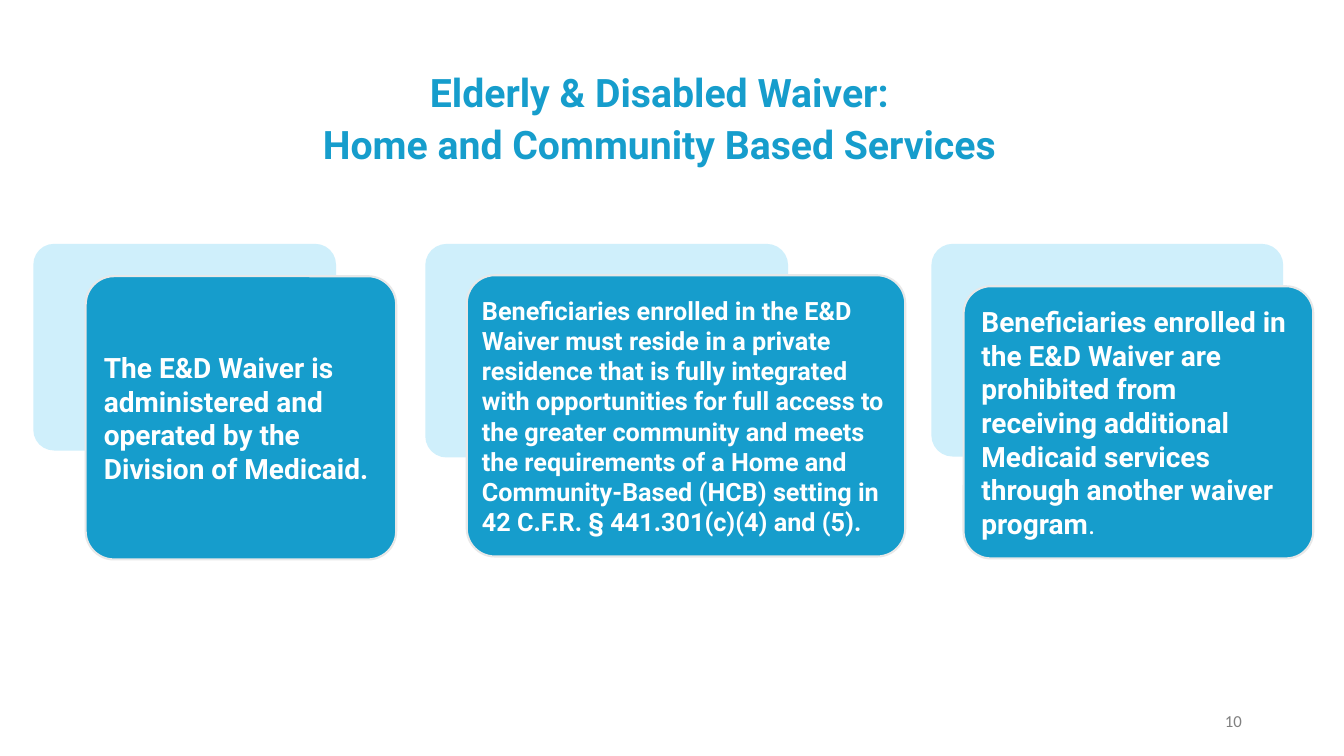
from dataclasses import dataclass

from lxml import etree
from pptx import Presentation
from pptx.dml.color import RGBColor
from pptx.enum import shapes, text
from pptx.oxml import ns
from pptx.util import Pt


@dataclass(frozen=True)
class Theme:
    """Colours, fonts and type sizes of the slide."""
    blue: str = "169DCC"
    pale: str = "CAEEFB"
    edge: str = "E8E8E8"
    white: str = "FFFFFF"
    grey: str = "808080"
    heading_font: str = "Roboto"
    number_font: str = "Calibri"
    title_size: int = 28
    card_size: int = 20
    dense_size: int = 18
    number_size: int = 12
    corner: float = 0.1


THEME = Theme()
SIDES = ("margin_left", "margin_top", "margin_right", "margin_bottom")
CARDS = [
    dict(panel=(23.8, 174.2, 216.2, 147.6), card=(61.2, 197.3, 221.8, 202.3),
         size=THEME.card_size, insets=(7.2, 3.6, 7.2, 3.6),
         words=[("The E&D Waiver is administered and operated by the "
                 "Division of Medicaid.", True)]),
    dict(panel=(303.8, 174.2, 259.2, 152.6), card=(333.4, 196.6, 313.2, 200.9),
         size=THEME.dense_size, insets=(5, 5, 5, 5),
         words=[("Beneficiaries enrolled in the E&D Waiver must reside in a "
                 "private residence that is fully integrated with "
                 "opportunities for full access to the greater community and "
                 "meets the requirements of a Home and Community-Based (HCB) "
                 "setting in 42 C.F.R. § 441.301(c)(4) and (5).", True)]),
    dict(panel=(665.3, 174.2, 251.3, 151.9), card=(688.3, 204.5, 249.8, 194.4),
         size=THEME.card_size, insets=(7.2, 3.6, 7.2, 3.6),
         words=[("Beneficiaries enrolled in the E&D Waiver are prohibited "
                 "from receiving additional Medicaid services through another "
                 "waiver program", True), (".", False)]),
]


def apply(target, formats):
    """Set every attribute named in a dict of format values."""
    for name, value in formats.items():
        setattr(target, name, value)


def write(paragraph, words, font, size, colour, bold=False):
    """Add one run of styled words to a paragraph."""
    run = paragraph.add_run()
    run.text = words
    apply(run.font, dict(name=font, size=Pt(size), bold=bold))
    run.font.color.rgb = RGBColor.from_string(colour)


def add_rounded(slide, box, fill):
    """Add a plain rounded rectangle without outline or shadow."""
    block = slide.shapes.add_shape(
        shapes.MSO_SHAPE.ROUNDED_RECTANGLE, *map(Pt, box))
    block.adjustments[0] = THEME.corner
    block.shadow.inherit = False
    block.fill.solid()
    block.fill.fore_color.rgb = RGBColor.from_string(fill)
    block.line.fill.background()
    return block


def add_panel(slide, box):
    """Add the translucent panel that stands behind a card."""
    panel = add_rounded(slide, box, THEME.pale)
    colour = panel.fill._xPr.find(".//" + ns.qn("a:srgbClr"))
    etree.SubElement(colour, ns.qn("a:alpha"), val="90000")


def add_card(slide, box, size, insets, words):
    """Add a card with its statement, left aligned and centred in height."""
    card = add_rounded(slide, box, THEME.blue)
    card.line.color.rgb = RGBColor.from_string(THEME.edge)
    card.line.width = Pt(1.5)
    frame = card.text_frame
    apply(frame, dict(word_wrap=True, vertical_anchor=text.MSO_ANCHOR.MIDDLE))
    apply(frame, dict(zip(SIDES, map(Pt, insets))))
    statement = frame.paragraphs[0]
    statement.alignment = text.PP_ALIGN.LEFT
    for part, bold in words:
        write(statement, part, THEME.heading_font, size, THEME.white, bold)


def add_title(slide, box, lines):
    """Add the centred title, one paragraph for each line."""
    frame = slide.shapes.add_textbox(*map(Pt, box)).text_frame
    frame.word_wrap = True
    for index, line in enumerate(lines):
        heading = frame.add_paragraph() if index else frame.paragraphs[0]
        apply(heading, dict(alignment=text.PP_ALIGN.CENTER, line_spacing=0.8,
                            space_before=Pt(10 if index else 0)))
        write(heading, line, THEME.heading_font, THEME.title_size,
              THEME.blue, True)


def add_page_number(slide, box, number):
    """Add the page number at the right of its box."""
    frame = slide.shapes.add_textbox(*map(Pt, box)).text_frame
    apply(frame, dict(word_wrap=True, vertical_anchor=text.MSO_ANCHOR.MIDDLE))
    page = frame.paragraphs[0]
    apply(page, dict(alignment=text.PP_ALIGN.RIGHT, space_after=Pt(6)))
    write(page, number, THEME.number_font, THEME.number_size, THEME.grey)


def main():
    """Build the slide and save it."""
    deck = Presentation()
    apply(deck, dict(slide_width=Pt(960), slide_height=Pt(540)))
    slide = deck.slides.add_slide(deck.slide_layouts[6])
    for entry in CARDS:
        add_panel(slide, entry["panel"])
        add_card(slide, entry["card"], entry["size"], entry["insets"],
                 entry["words"])
    add_title(slide, (128.9, 51.8, 684, 77),
              ["Elderly & Disabled Waiver:",
               "Home and Community Based Services"])
    add_page_number(slide, (678.2, 500.4, 216, 28.8), "10")
    deck.save("out.pptx")


if __name__ == "__main__":
    main()
